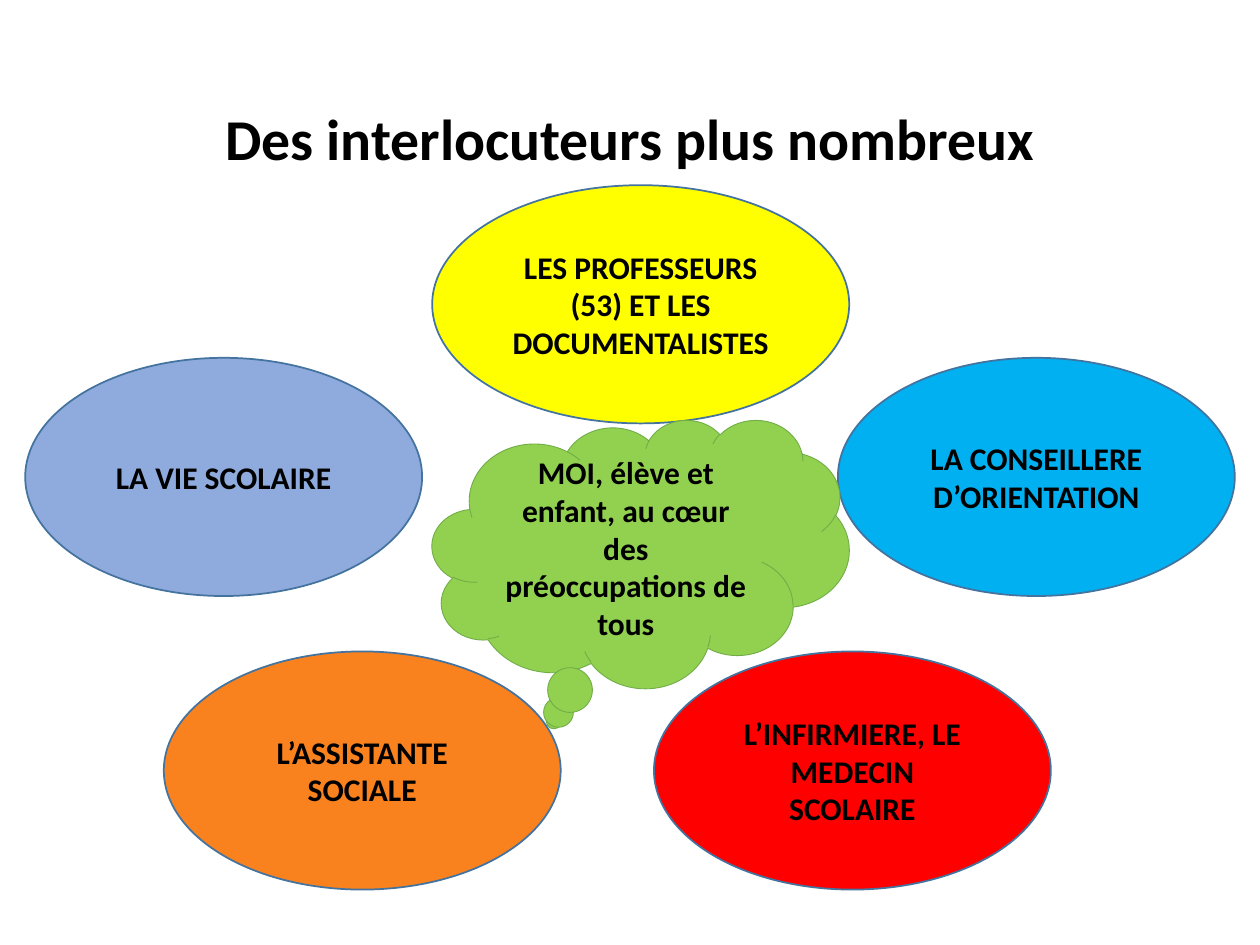
from pptx import Presentation
from pptx.dml.color import RGBColor
from pptx.enum.shapes import MSO_SHAPE
from pptx.enum.text import MSO_ANCHOR, PP_ALIGN
from pptx.util import Inches, Pt

BLACK = RGBColor(0x00, 0x00, 0x00)
OUTLINE = RGBColor(0x43, 0x73, 0x9E)
PERIWINKLE = RGBColor(0x8F, 0xAA, 0xDC)
YELLOW = RGBColor(0xFF, 0xFF, 0x00)
RED = RGBColor(0xFF, 0x00, 0x00)
ORANGE = RGBColor(0xF9, 0x82, 0x1F)
SKY = RGBColor(0x00, 0xB0, 0xF0)
GREEN = RGBColor(0x92, 0xD0, 0x50)
DARK_GREEN = RGBColor(0x70, 0xAD, 0x47)

FONT = "Calibri"
SLIDE_WIDTH, SLIDE_HEIGHT = 10, 7.5
OVAL_WIDTH, OVAL_HEIGHT = 3.15, 1.89
CENTRE_LEFT, CENTRE_WIDTH = 3.43, 3.31
SIDE_MARGIN, SIDE_TOP = 0.2, 2.84
BOTTOM_TOP = 5.17

CONTACTS = [
    ("LA VIE SCOLAIRE", PERIWINKLE,
     (SIDE_MARGIN, SIDE_TOP, OVAL_WIDTH, OVAL_HEIGHT)),
    ("LES PROFESSEURS (53) ET LES DOCUMENTALISTES", YELLOW,
     (CENTRE_LEFT, 1.47, CENTRE_WIDTH, OVAL_HEIGHT)),
    ("L’INFIRMIERE, LE MEDECIN SCOLAIRE", RED,
     (5.19, BOTTOM_TOP, OVAL_WIDTH, OVAL_HEIGHT)),
    ("L’ASSISTANTE SOCIALE", ORANGE,
     (1.3, BOTTOM_TOP, OVAL_WIDTH, OVAL_HEIGHT)),
    ("LA CONSEILLERE D’ORIENTATION", SKY,
     (SLIDE_WIDTH - SIDE_MARGIN - OVAL_WIDTH, SIDE_TOP, OVAL_WIDTH, OVAL_HEIGHT)),
]


def write_text(shape, text, size, line_spacing=1.0):
    """Write one bold, centred paragraph into a shape."""
    frame = shape.text_frame
    frame.word_wrap = True
    frame.vertical_anchor = MSO_ANCHOR.MIDDLE
    para = frame.paragraphs[0]
    para.alignment = PP_ALIGN.CENTER
    para.line_spacing = line_spacing
    span = para.add_run()
    span.text = text
    span.font.name = FONT
    span.font.size = Pt(size)
    span.font.bold = True
    span.font.color.rgb = BLACK


def add_title(page, box, text):
    """Place the slide title in the given box."""
    title = page.shapes.add_textbox(*map(Inches, box))
    write_text(title, text, 33, 0.9)


def add_bubble(page, box, kind, text, fill, outline, line_width):
    """Place a filled, labelled bubble in the given box."""
    bubble = page.shapes.add_shape(kind, *map(Inches, box))
    bubble.shadow.inherit = False
    bubble.fill.solid()
    bubble.fill.fore_color.rgb = fill
    bubble.line.color.rgb = outline
    bubble.line.width = Pt(line_width)
    write_text(bubble, text, 18)


def add_contacts(page, contacts):
    """Place one oval for each person the pupil can turn to."""
    for text, fill, box in contacts:
        add_bubble(page, box, MSO_SHAPE.OVAL, text, fill, OUTLINE, 1)


def add_pupil(page, box):
    """Place the pupil's thought cloud in the given box."""
    add_bubble(page, box, MSO_SHAPE.CLOUD_CALLOUT,
               "MOI, élève et enfant, au cœur des préoccupations de tous",
               GREEN, DARK_GREEN, 0.5)


def main():
    """Build and save the deck."""
    deck = Presentation()
    deck.slide_width = Inches(SLIDE_WIDTH)
    deck.slide_height = Inches(SLIDE_HEIGHT)
    page = deck.slides.add_slide(deck.slide_layouts[6])
    add_title(page, (0.69, 0.4, 8.62, 1.45), "Des interlocuteurs plus nombreux")
    add_contacts(page, CONTACTS)
    add_pupil(page, (CENTRE_LEFT, 3.33, CENTRE_WIDTH, 2.13))
    deck.save("out.pptx")


if __name__ == "__main__":
    main()
